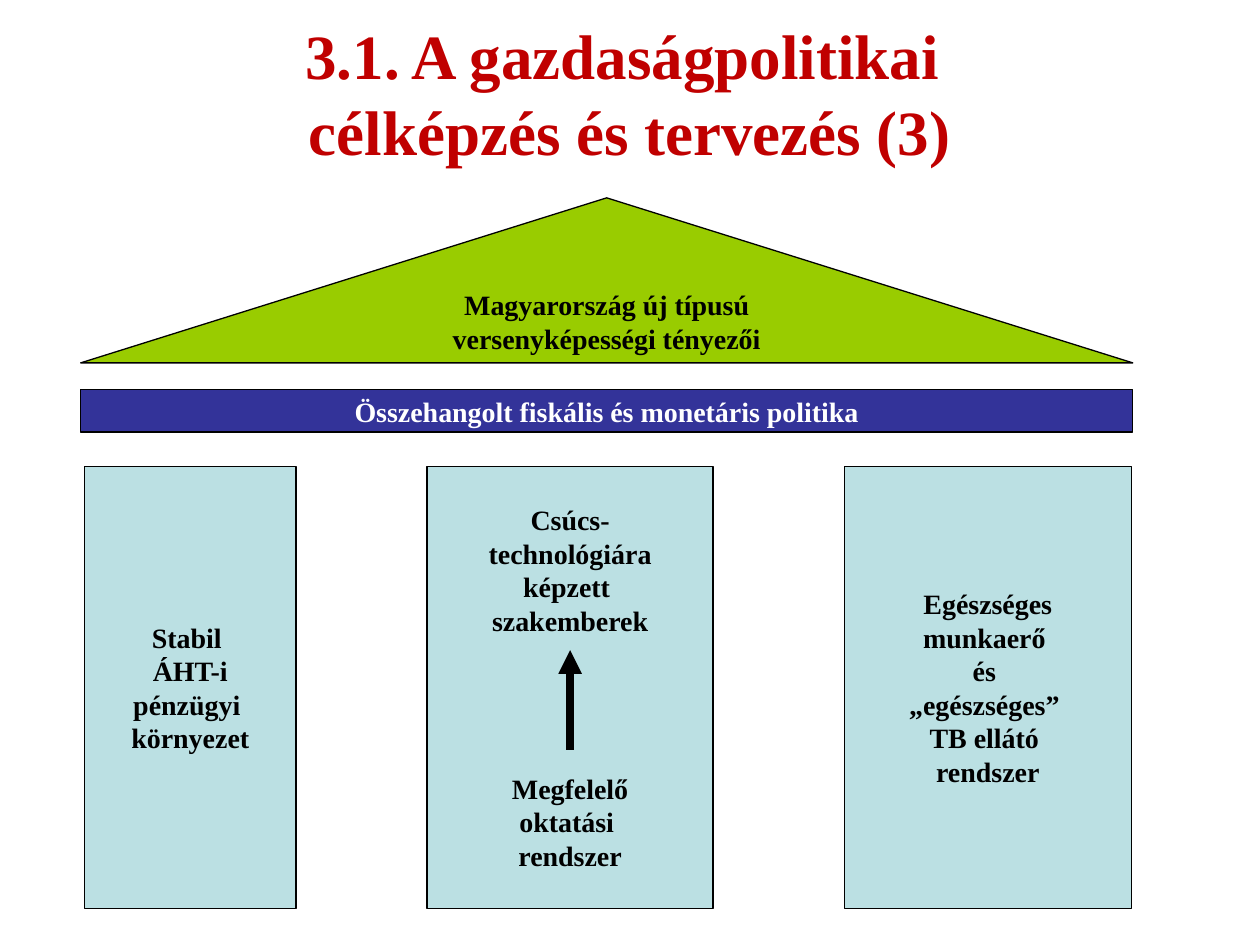
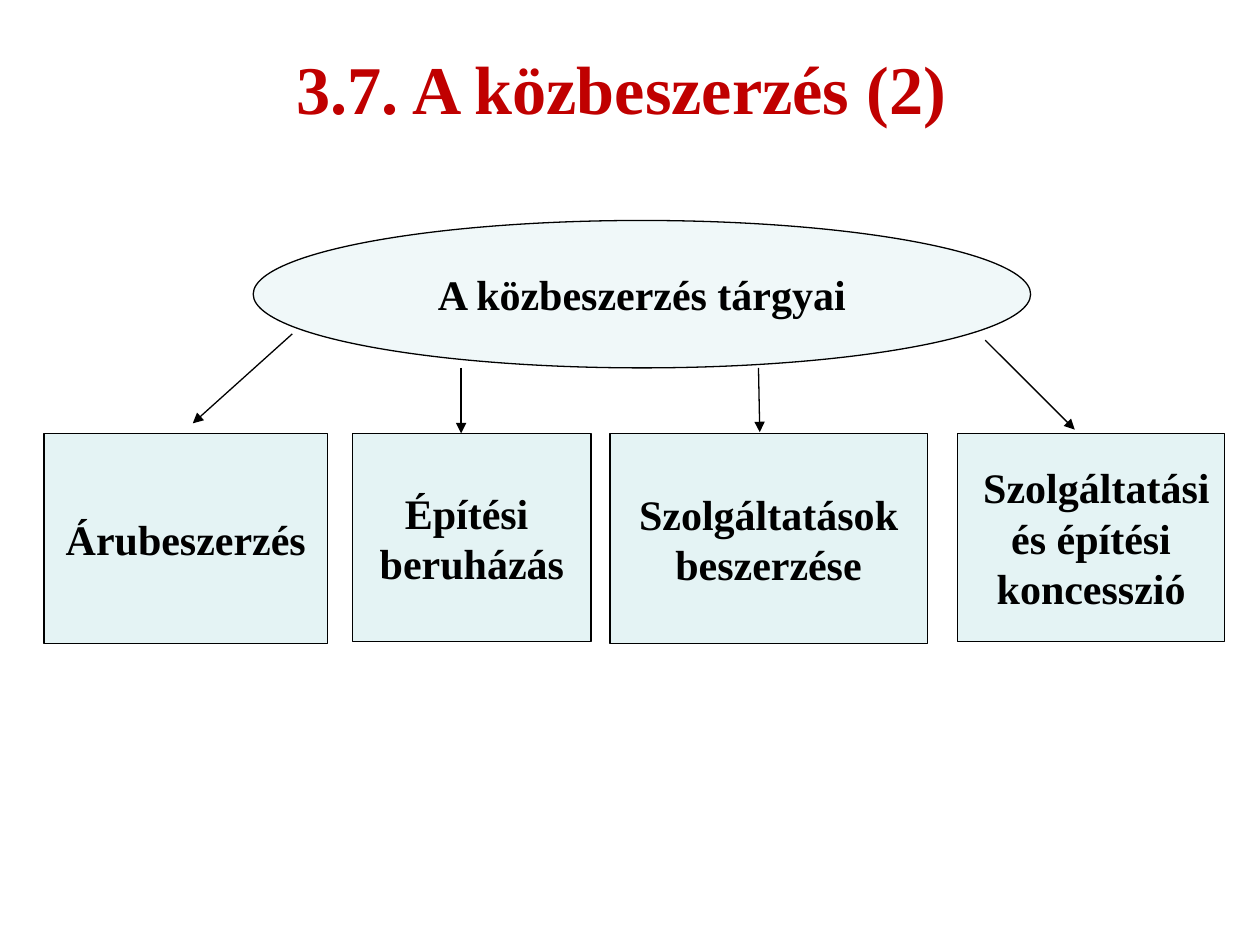
from lxml.etree import SubElement
from pptx import Presentation
from pptx.dml.color import RGBColor
from pptx.enum.shapes import MSO_CONNECTOR, MSO_SHAPE
from pptx.enum.text import MSO_ANCHOR, PP_ALIGN
from pptx.oxml.ns import qn
from pptx.util import Inches, Pt

FONT = "Times New Roman"
RED, BLACK, WHITE = "C00000", "000000", "FFFFFF"
GREEN, NAVY, AQUA = "99CC00", "333399", "BBE0E3"
PALE, MINT = "F0F8F9", "E4F3F4"


def color(code):
    return RGBColor.from_string(code)


def write(frame, lines, size, ink=BLACK, anchor=MSO_ANCHOR.MIDDLE, wrap=False):
    """Fill a frame with centred bold lines and return its paragraphs."""
    frame.word_wrap = wrap
    frame.vertical_anchor = anchor
    frame.margin_left = frame.margin_right = Inches(0.07)
    frame.margin_top = frame.margin_bottom = Inches(0.04)
    for i, line in enumerate(lines):
        para = frame.paragraphs[0] if i == 0 else frame.add_paragraph()
        para.alignment = PP_ALIGN.CENTER
        run = para.add_run()
        run.text = line
        font = run.font
        font.name, font.size, font.bold = FONT, Pt(size), True
        font.color.rgb = color(ink)
    return frame.paragraphs


def title(slide, lines, size, height):
    box = slide.shapes.add_textbox(0, 0, Inches(10), Inches(height))
    write(box.text_frame, lines, size, RED, wrap=True)


def block(slide, kind, box, fill, lines, size, **style):
    """Add an outlined shape with text and return its paragraphs."""
    shape = slide.shapes.add_shape(kind, *map(Inches, box))
    shape.shadow.inherit = False
    shape.fill.solid()
    shape.fill.fore_color.rgb = color(fill)
    shape.line.color.rgb = color(BLACK)
    shape.line.width = Pt(0.75)
    return write(shape.text_frame, lines, size, **style)


def arrow(slide, start, end, width=0.75):
    link = slide.shapes.add_connector(
        MSO_CONNECTOR.STRAIGHT, *map(Inches, (*start, *end)))
    link.line.color.rgb = color(BLACK)
    link.line.width = Pt(width)
    SubElement(link.line._get_or_add_ln(), qn("a:tailEnd"), type="triangle")
    SubElement(link._element.spPr, qn("a:effectLst"))


def house(slide, left, top, width):
    """Draw the roof, the beam and three pillars."""
    block(slide, MSO_SHAPE.ISOSCELES_TRIANGLE, (left, top, width, 1.31), GREEN,
          ["Magyarország új típusú", "versenyképességi tényezői"], 16)
    block(slide, MSO_SHAPE.RECTANGLE, (left, top + 1.52, width, 0.34), NAVY,
          ["Összehangolt fiskális és monetáris politika"], 16,
          ink=WHITE, anchor=MSO_ANCHOR.TOP, wrap=True)

    base = top + 2.13
    pillars = [
        (0.03, 1.68, ["Stabil ", "ÁHT-i", "pénzügyi ", "környezet"]),
        (2.75, 2.27, ["Csúcs-", "technológiára", "képzett ", "szakemberek",
                      "Megfelelő", "oktatási ", "rendszer"]),
        (6.06, 2.28, ["Egészséges", "munkaerő ", "és ", "„egészséges” ",
                      "TB ellátó ", "rendszer"]),
    ]
    for shift, wide, lines in pillars:
        paras = block(slide, MSO_SHAPE.RECTANGLE,
                      (left + shift, base, wide, 3.51), AQUA, lines, 16)
        for para in paras:
            if para.text == "Megfelelő":
                para.space_before = Pt(76.6)  # room for the arrow
                mid = left + shift + wide / 2
                arrow(slide, (mid, base + 2.25), (mid, base + 1.46), 4.5)


def tree(slide, left, top):
    """Draw the subject oval, its four branches and their arrows."""
    block(slide, MSO_SHAPE.OVAL, (left + 1.66, top, 6.17, 1.17), PALE,
          ["A közbeszerzés tárgyai"], 24)
    # shift, width, height, lines, arrow start, arrow end
    kinds = [
        (0, 2.25, 1.67, ["Árubeszerzés"], (1.97, 0.9), (1.18, 1.61)),
        (2.45, 1.89, 1.65, ["Építési ", "beruházás"],
         (3.31, 1.17), (3.31, 1.69)),
        (4.49, 2.52, 1.67, ["Szolgáltatások", "beszerzése"],
         (5.67, 1.17), (5.68, 1.68)),
        (7.25, 2.12, 1.65, [" Szolgáltatási", " és építési ", "koncesszió"],
         (7.47, 0.95), (8.18, 1.66)),
    ]
    for shift, wide, high, lines, start, end in kinds:
        block(slide, MSO_SHAPE.RECTANGLE,
              (left + shift, top + 1.69, wide, high), MINT, lines, 24)
        arrow(slide, *[(left + x, top + y) for x, y in (start, end)])


def main():
    deck = Presentation()
    deck.slide_width, deck.slide_height = Inches(10), Inches(7.5)
    blank = deck.slide_layouts[6]

    goals = deck.slides.add_slide(blank)
    title(goals, ["3.1. A gazdaságpolitikai ", "célképzés és tervezés (3)"],
          36, 1.47)
    house(goals, 0.64, 1.57, 8.35)

    buying = deck.slides.add_slide(blank)
    title(buying, ["3.7. A közbeszerzés (2) "], 39, 1.39)
    tree(buying, 0.35, 1.75)

    deck.save("out.pptx")


if __name__ == "__main__":
    main()
